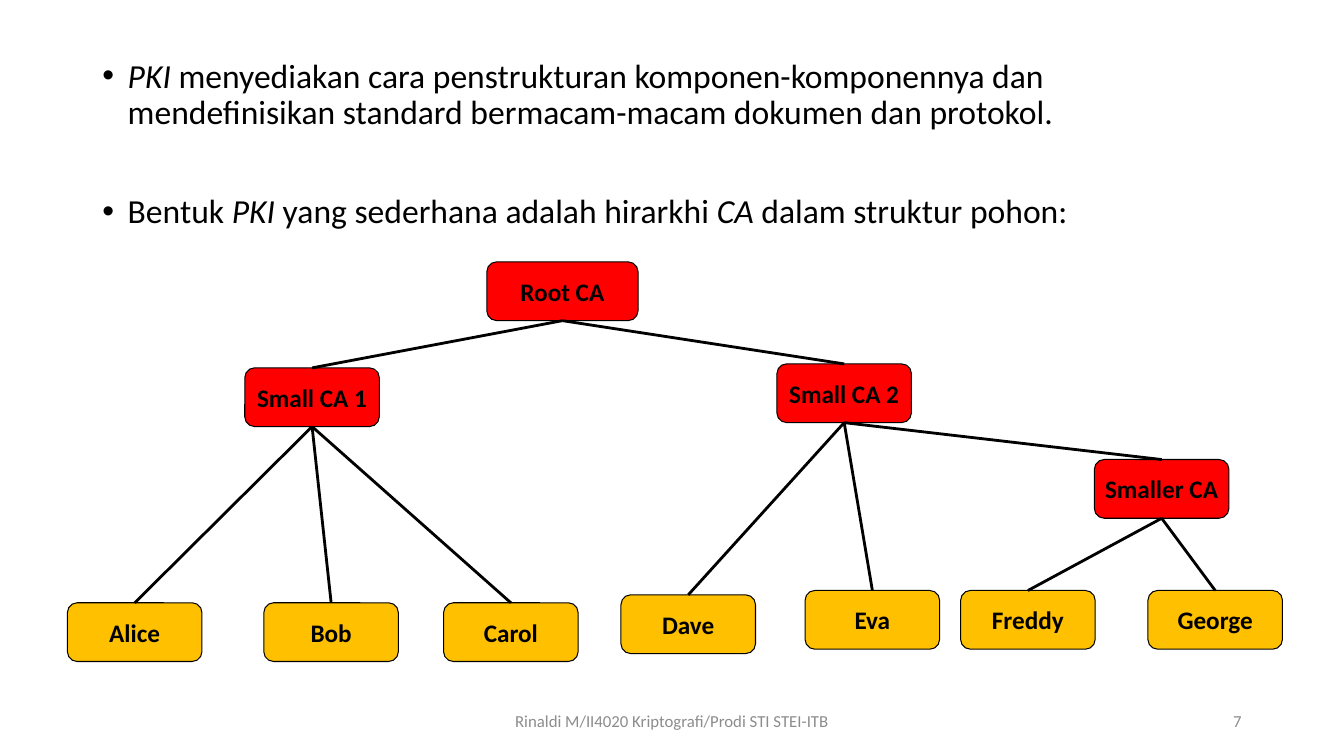
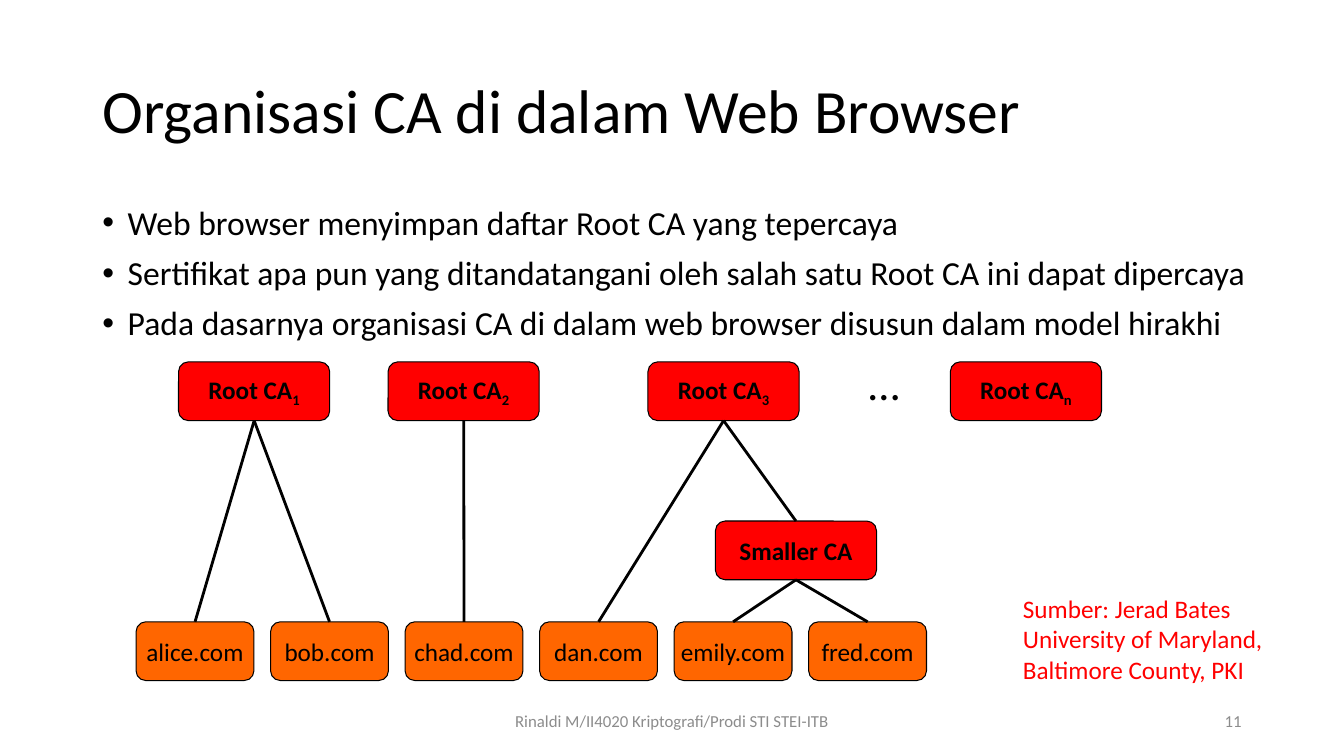
from collections import namedtuple

from lxml.etree import SubElement
from pptx import Presentation
from pptx.dml.color import RGBColor
from pptx.enum.shapes import MSO_CONNECTOR, MSO_SHAPE
from pptx.enum.text import MSO_ANCHOR, PP_ALIGN
from pptx.oxml.ns import qn
from pptx.util import Cm, Pt

FONT = "Calibri"
BLACK, GRAY, RED, AMBER, ORANGE = "000000", "8C8C8C", "FF0000", "FFC000", "FF6600"
TITLE_ONLY, BLANK = 5, 6
FOOTER = "Rinaldi M/II4020 Kriptografi/Prodi STI STEI-ITB"
NODE_HEIGHT = 1.48
ROOT_WIDTH = 3.81
CONTENT_LEFT = 2.33

Box = namedtuple("Box", "left top width height")
Node = namedtuple("Node", "label left top width fill bold")


def rgb(hex_code):
    """Return the colour for a hex string."""
    return RGBColor.from_string(hex_code)


def format_run(run, size, color=BLACK, bold=False):
    """Give a run the deck's font with a size, colour and weight."""
    run.font.name = FONT
    run.font.size = Pt(size)
    run.font.color.rgb = rgb(color)
    run.font.bold = bold


def write(paragraph, text, size, color=BLACK, bold=False):
    """Write text in which *word* is italic and _n_ is a subscript."""
    subscript = "_" in text
    for index, piece in enumerate(text.split("_" if subscript else "*")):
        if not piece:
            continue
        run = paragraph.add_run()
        run.text = piece
        format_run(run, size, color, bold)
        if index % 2 and subscript:
            run.font._element.set("baseline", "-25000")
        elif index % 2:
            run.font.italic = True


def add_text(slide, box, lines, size, color=BLACK, align=PP_ALIGN.LEFT,
             anchor=MSO_ANCHOR.TOP, wrap=True):
    """Add a text box with one paragraph per line and return its paragraphs."""
    frame = slide.shapes.add_textbox(*map(Cm, box)).text_frame
    frame.word_wrap = wrap
    frame.vertical_anchor = anchor
    for index, line in enumerate(lines):
        paragraph = frame.add_paragraph() if index else frame.paragraphs[0]
        paragraph.alignment = align
        write(paragraph, line, size, color)
    return frame.paragraphs


def add_bullets(slide, box, lines, gap=10):
    """Add a bulleted list with a given space between its points."""
    for paragraph in add_text(slide, box, lines, 24):
        paragraph.line_spacing = 0.9
        paragraph.space_before = Pt(gap)
        properties = paragraph._p.get_or_add_pPr()
        properties.set("marL", str(Cm(0.64)))
        properties.set("indent", str(-Cm(0.64)))
        SubElement(properties, qn("a:buFont"), typeface="Arial")
        SubElement(properties, qn("a:buChar"), char="•")


def add_title(slide, box, text):
    """Place and format the title placeholder."""
    title = slide.shapes.title
    title.left, title.top, title.width, title.height = map(Cm, box)
    title.text_frame.text = text
    title.text_frame.vertical_anchor = MSO_ANCHOR.MIDDLE
    paragraph = title.text_frame.paragraphs[0]
    paragraph.alignment = PP_ALIGN.LEFT
    paragraph.line_spacing = 0.9
    format_run(paragraph.runs[0], 44)


def add_footer(slide, page):
    """Add the course line and the page number."""
    for left, width, text, align in ((11.22, 11.43, FOOTER, PP_ALIGN.CENTER),
                                     (23.92, 7.62, page, PP_ALIGN.RIGHT)):
        add_text(slide, Box(left, 17.66, width, 1.01), [text], 12, GRAY,
                 align, MSO_ANCHOR.MIDDLE)


def add_node(slide, box, node):
    """Add one labelled node at its offset inside the tree's box."""
    shape = slide.shapes.add_shape(
        MSO_SHAPE.FLOWCHART_ALTERNATE_PROCESS, Cm(box.left + node.left),
        Cm(box.top + node.top), Cm(node.width), Cm(NODE_HEIGHT))
    shape.shadow.inherit = False
    shape.fill.solid()
    shape.fill.fore_color.rgb = rgb(node.fill)
    shape.line.color.rgb = rgb(BLACK)
    shape.line.width = Pt(0.75)
    shape.text_frame.word_wrap = False
    shape.text_frame.vertical_anchor = MSO_ANCHOR.MIDDLE
    paragraph = shape.text_frame.paragraphs[0]
    paragraph.alignment = PP_ALIGN.CENTER
    write(paragraph, node.label, 18, bold=node.bold)
    return shape


def add_branch(slide, parent, child):
    """Join the bottom of a parent to the top of a child."""
    branch = slide.shapes.add_connector(MSO_CONNECTOR.STRAIGHT, 0, 0, 0, 0)
    branch.begin_connect(parent, 2)
    branch.end_connect(child, 0)
    branch.line.color.rgb = rgb(BLACK)
    branch.line.width = Pt(2)
    SubElement(branch._element.spPr, qn("a:effectLst"))


def add_tree(slide, box, nodes, children):
    """Draw the nodes of a CA hierarchy and the branches between them."""
    shapes = {node.label: add_node(slide, box, node) for node in nodes}
    for parent, names in children.items():
        for name in names:
            add_branch(slide, shapes[parent], shapes[name])


def build_hierarchy_slide(deck):
    """Build the slide on a PKI as a tree of CAs."""
    slide = deck.slides.add_slide(deck.slide_layouts[BLANK])
    add_bullets(slide, Box(CONTENT_LEFT, 1.37, 29.21, 5), [
        "*PKI* menyediakan cara penstrukturan komponen-komponennya dan "
        "mendefinisikan standard bermacam-macam dokumen dan protokol.",
        "Bentuk *PKI* yang sederhana adalah hirarkhi *CA* dalam struktur pohon:",
    ], gap=45)
    add_footer(slide, "7")

    node_width = 3.39
    authorities = [("Small CA 1", 4.47, 2.67), ("Small CA 2", 17.88, 2.57),
                   ("Smaller CA", 25.88, 4.98)]
    users = [("Alice", 0, 8.59), ("Bob", 4.95, 8.59), ("Carol", 9.48, 8.59),
             ("Dave", 13.95, 8.39), ("Eva", 18.59, 8.28),
             ("Freddy", 22.51, 8.28), ("George", 27.23, 8.28)]
    nodes = [Node("Root CA", 10.57, 0, ROOT_WIDTH, RED, True)]
    nodes += [Node(*place, node_width, RED, True) for place in authorities]
    nodes += [Node(*place, node_width, AMBER, True) for place in users]
    add_tree(slide, Box(1.7, 6.6, 30.62, 10.07), nodes, {
        "Root CA": ["Small CA 1", "Small CA 2"],
        "Small CA 1": ["Alice", "Bob", "Carol"],
        "Small CA 2": ["Dave", "Eva", "Smaller CA"],
        "Smaller CA": ["Freddy", "George"],
    })


def build_browser_slide(deck):
    """Build the slide on the CAs known to a web browser."""
    slide = deck.slides.add_slide(deck.slide_layouts[TITLE_ONLY])
    add_title(slide, Box(CONTENT_LEFT, 1.01, 29.21, 3.68),
              "Organisasi CA di dalam Web Browser")
    add_bullets(slide, Box(CONTENT_LEFT, 5.07, 30.3, 4), [
        "Web browser menyimpan daftar Root CA yang tepercaya",
        "Sertifikat apa pun yang ditandatangani oleh salah satu Root CA ini dapat dipercaya",
        "Pada dasarnya organisasi CA di dalam web browser disusun dalam model hirakhi",
    ])
    add_footer(slide, "11")

    roots = [("1", 1.07), ("2", 6.35), ("3", 12.9), ("n", 20.52)]
    sites = ["alice.com", "bob.com", "chad.com", "dan.com", "emily.com", "fred.com"]
    nodes = [Node(f"Root CA_{name}_", left, 0, ROOT_WIDTH, RED, True)
             for name, left in roots]
    nodes.append(Node("Smaller CA", 14.6, 4.01, 4.06, RED, True))
    nodes += [Node(site, round(3.39 * index, 2), 6.55, 2.97, ORANGE, False)
              for index, site in enumerate(sites)]
    add_tree(slide, Box(3.43, 9.12, 24.33, 8.03), nodes, {
        "Root CA_1_": ["alice.com", "bob.com"],
        "Root CA_2_": ["chad.com"],
        "Root CA_3_": ["dan.com", "Smaller CA"],
        "Smaller CA": ["emily.com", "fred.com"],
    })
    add_text(slide, Box(21.64, 8.84, 1.42, 1.6), ["…"], 32, wrap=False)
    add_text(slide, Box(25.53, 14.83, 6.83, 2.57),
             ["Sumber: Jerad Bates", "University of Maryland, Baltimore County, PKI"],
             18, RED)


def main():
    """Build and save the deck."""
    deck = Presentation()
    deck.slide_width, deck.slide_height = Cm(33.87), Cm(19.05)
    build_hierarchy_slide(deck)
    build_browser_slide(deck)
    deck.save("out.pptx")


if __name__ == "__main__":
    main()
